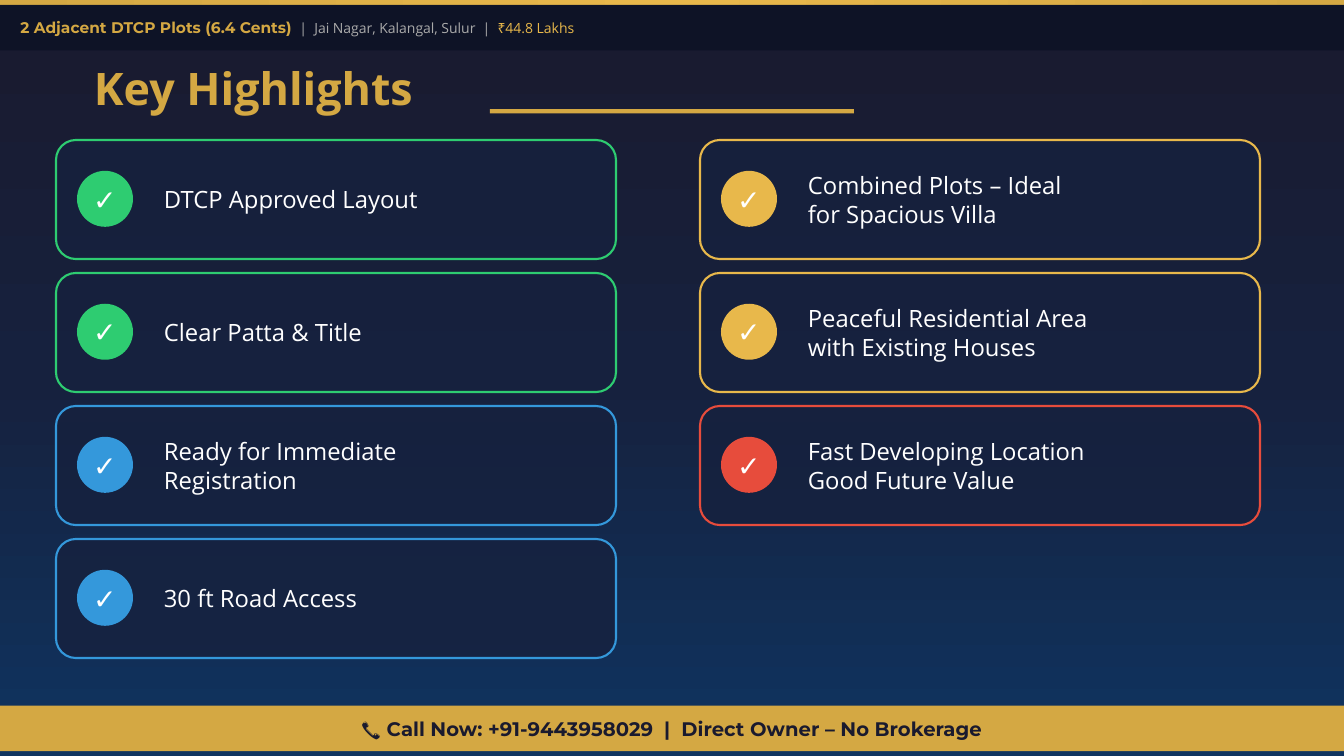
from copy import deepcopy
from lxml.etree import SubElement as Sub
from pptx import Presentation
from pptx.dml.color import RGBColor as RGB
from pptx.enum.shapes import MSO_SHAPE as Kind
from pptx.enum.text import MSO_ANCHOR as Anchor, PP_ALIGN as Align
from pptx.oxml.ns import qn
from pptx.util import Emu, Pt

SCALE = 6350
GOLD, AMBER, NAVY, INK = "D4A843", "E8B84B", "16213E", "1A1A2E"
GREEN, BLUE, RED, WHITE, GREY = "2ECC71", "3498DB", "E74C3C", "FFFFFF", "AAAAAA"
HEAD, BODY = "Montserrat", "Open Sans"

COLUMNS = [
    (80, [
        ("DTCP Approved Layout", GREEN),
        ("Clear Patta & Title", GREEN),
        ("Ready for Immediate\nRegistration", BLUE),
        ("30 ft Road Access", BLUE),
    ]),
    (1000, [
        ("Combined Plots – Ideal\nfor Spacious Villa", AMBER),
        ("Peaceful Residential Area\nwith Existing Houses", AMBER),
        ("Fast Developing Location\nGood Future Value", RED),
    ]),
]


def px(n):
    return Emu(n * SCALE)


def paint(color, code):
    color.rgb = RGB.from_string(code)


def blend(fill, owner, codes, angle):
    fill.gradient()
    fill.gradient_angle = angle
    stops = owner.xpath(".//a:gsLst")[0]
    stops.insert(1, deepcopy(stops[0]))
    for i, (stop, code) in enumerate(zip(fill.gradient_stops, codes)):
        paint(stop.color, code)
        stop.position = i / 2


def shape(slide, kind, box, code, alpha=100, edge=None):
    item = slide.shapes.add_shape(kind, *map(px, box))
    item.shadow.inherit = False
    item.fill.solid()
    paint(item.fill.fore_color, code)
    if alpha < 100:
        tint = item.element.xpath("./p:spPr/a:solidFill/a:srgbClr")[0]
        Sub(tint, qn("a:alpha")).set("val", str(alpha * 1000))
    if edge:
        paint(item.line.color, edge)
        item.line.width = Pt(1.5)
    else:
        item.line.fill.background()
    return item


def style(run, size, face, code, bold=False):
    font = run.font
    font.size, font.name, font.bold = Pt(size), face, bold
    paint(font.color, code)


def write(item, text, size, face, code, bold=False, align=Align.LEFT):
    para = item.text_frame.paragraphs[0]
    para.text = text
    para.alignment = align
    for run in para.runs:
        style(run, size, face, code, bold)


def label(slide, box, text, size, code, bold=False, anchor=Anchor.TOP):
    item = slide.shapes.add_textbox(*map(px, box))
    item.text_frame.word_wrap = True
    item.text_frame.vertical_anchor = anchor
    write(item, text, size, BODY, code, bold)


def band(slide, top, code, alpha=100):
    item = shape(slide, Kind.RECTANGLE, (0, top, 1920, 65), code, alpha)
    frame = item.text_frame
    frame.vertical_anchor = Anchor.MIDDLE
    frame.margin_left = frame.margin_right = px(29)
    frame.margin_top = frame.margin_bottom = 0
    return item


def header(slide):
    strip = shape(slide, Kind.RECTANGLE, (0, 0, 1920, 7), GOLD)
    blend(strip.fill, strip.element, (GOLD, AMBER, GOLD), 0)
    para = band(slide, 7, "0D1225", 85).text_frame.paragraphs[0]
    para.alignment = Align.LEFT
    for text, *look in (
        ("2 Adjacent DTCP Plots (6.4 Cents)", 11, HEAD, GOLD, True),
        ("  |  Jai Nagar, Kalangal, Sulur  |  ", 10, BODY, GREY),
        ("₹44.8 Lakhs", 10, BODY, AMBER),
    ):
        run = para.add_run()
        run.text = text
        style(run, *look)


def footer(slide):
    text = "📞 Call Now: +91-9443958029  |  Direct Owner – No Brokerage"
    write(band(slide, 1008, GOLD), text, 14, HEAD, INK, True, Align.CENTER)


def card(slide, left, top, text, code):
    shape(slide, Kind.ROUNDED_RECTANGLE, (left, top, 800, 170), NAVY, 80, code)
    badge = shape(slide, Kind.OVAL, (left + 30, top + 44, 80, 80), code)
    badge.text_frame.word_wrap = False
    badge.text_frame.vertical_anchor = Anchor.MIDDLE
    write(badge, "✓", 20, BODY, WHITE, True, Align.CENTER)
    label(slide, (left + 140, top + 30, 620, 110), text, 17, WHITE,
          anchor=Anchor.MIDDLE)


def main():
    deck = Presentation()
    deck.slide_width, deck.slide_height = px(1920), px(1080)
    slide = deck.slides.add_slide(deck.slide_layouts[6])
    blend(slide.background.fill, slide.element, (INK, NAVY, "0F3460"), 270)
    header(slide)
    footer(slide)
    label(slide, (120, 80, 1680, 70), "Key Highlights", 32, GOLD, True)
    shape(slide, Kind.RECTANGLE, (700, 156, 520, 6), GOLD)
    for left, cards in COLUMNS:
        for row, (text, code) in enumerate(cards):
            card(slide, left, 200 + row * 190, text, code)
    deck.save("out.pptx")


if __name__ == "__main__":
    main()
